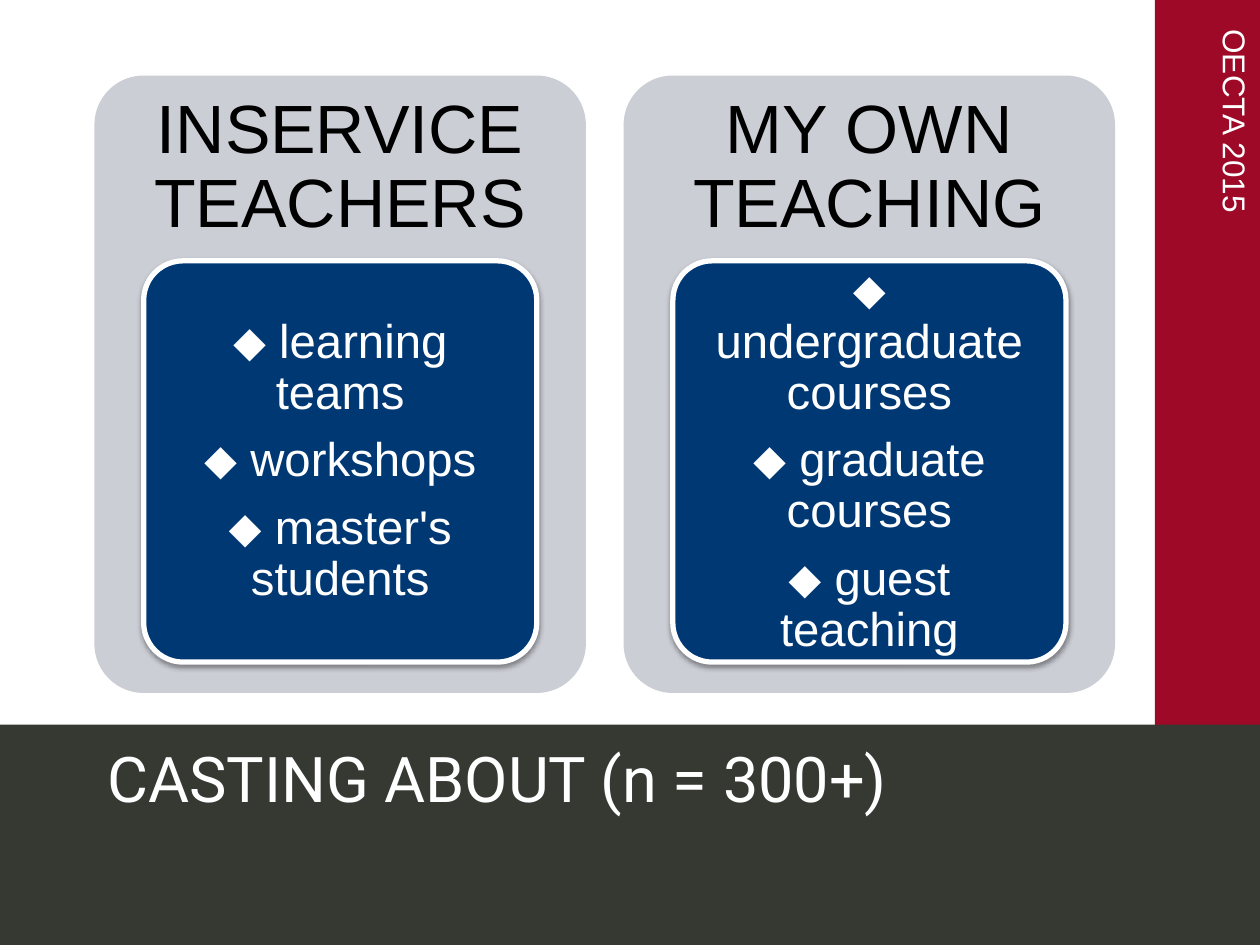
from lxml.etree import SubElement
from pptx import Presentation
from pptx.dml.color import RGBColor
from pptx.enum.shapes import MSO_SHAPE
from pptx.enum.text import MSO_ANCHOR, PP_ALIGN
from pptx.oxml.ns import qn
from pptx.util import Pt

WHITE = "FFFFFF"
CARD_WIDTH = 280.8
CARD_GAP = 21.6
CARDS = [
    ("INSERVICE TEACHERS", ["learning teams", "workshops", "master's students"]),
    ("MY OWN TEACHING", ["undergraduate courses", "graduate courses", "guest teaching"]),
]


def color(value):
    return RGBColor.from_string(value)


def add_block(page, kind, left, top, width, height, fill):
    block = page.shapes.add_shape(kind, Pt(left), Pt(top), Pt(width), Pt(height))
    block.shadow.inherit = False
    block.fill.solid()
    block.fill.fore_color.rgb = color(fill)
    block.line.fill.background()
    if kind == MSO_SHAPE.ROUNDED_RECTANGLE:
        block.adjustments[0] = 0.1
    return block


def add_shadow(block):
    effects = block.element.spPr.find(qn("a:effectLst"))
    shadow = SubElement(effects, qn("a:outerShdw"), blurRad=str(Pt(3.1)),
                        dist=str(Pt(1.6)), dir="5400000", rotWithShape="0")
    tint = SubElement(shadow, qn("a:srgbClr"), val="000000")
    SubElement(tint, qn("a:alpha"), val="38000")


def set_margins(frame, horizontal, vertical):
    frame.margin_left = frame.margin_right = Pt(horizontal)
    frame.margin_top = frame.margin_bottom = Pt(vertical)


def write(frame, lines, size, fill, font="Arial", align=PP_ALIGN.CENTER, spacing=0.9):
    frame.text = "\n".join(lines)
    frame.word_wrap = True
    frame.vertical_anchor = MSO_ANCHOR.MIDDLE
    for para in frame.paragraphs:
        para.alignment = align
        para.line_spacing = spacing
        para.space_before = Pt(0)
        para.space_after = Pt(0 if len(lines) == 1 else 0.35 * size)
        for span in para.runs:
            span.font.name = font
            span.font.size = Pt(size)
            span.font.color.rgb = color(fill)


def add_card(page, left, heading, items):
    add_block(page, MSO_SHAPE.ROUNDED_RECTANGLE, left, 43.2, CARD_WIDTH, 352.8, "CCCED6")
    box = page.shapes.add_textbox(Pt(left), Pt(43.2), Pt(CARD_WIDTH), Pt(105.84))
    set_margins(box.text_frame, 11.7, 11.7)
    write(box.text_frame, [heading], 39, "000000")

    panel = add_block(page, MSO_SHAPE.ROUNDED_RECTANGLE, left + CARD_WIDTH * 0.1, 149.04,
                      CARD_WIDTH * 0.8, 229.3, "003874")
    panel.line.color.rgb = color(WHITE)
    panel.line.width = Pt(3)
    add_shadow(panel)
    set_margins(panel.text_frame, 6, 4)
    write(panel.text_frame, [f"⬥ {item}" for item in items], 27, WHITE)


def add_side_label(page, text):
    box = page.shapes.add_textbox(Pt(565.2), Pt(126), Pt(281.5), Pt(28.8))
    box.rotation = 90
    write(box.text_frame, [text], 18, WHITE, align=PP_ALIGN.LEFT, spacing=1.0)
    box.text_frame.margin_left = Pt(17.2)


def place_title(page, text):
    title = page.shapes.title
    title.left, title.top, title.width, title.height = Pt(54), Pt(414), Pt(642), Pt(60)
    write(title.text_frame, [text], 36, WHITE, "Roboto", PP_ALIGN.LEFT, 1.0)
    title.element.getparent().append(title.element)


def main():
    deck = Presentation()
    deck.slide_width, deck.slide_height = Pt(720), Pt(540)
    page = deck.slides.add_slide(deck.slide_layouts[5])
    add_block(page, MSO_SHAPE.RECTANGLE, 660, 0, 60, 540, "9E0927")
    add_block(page, MSO_SHAPE.RECTANGLE, 0, 414, 720, 126, "363832")
    add_side_label(page, "OECTA 2015")
    place_title(page, "CASTING ABOUT (n = 300+)")
    for index, (heading, items) in enumerate(CARDS):
        add_card(page, 54 + index * (CARD_WIDTH + CARD_GAP), heading, items)
    deck.save("out.pptx")


if __name__ == "__main__":
    main()
